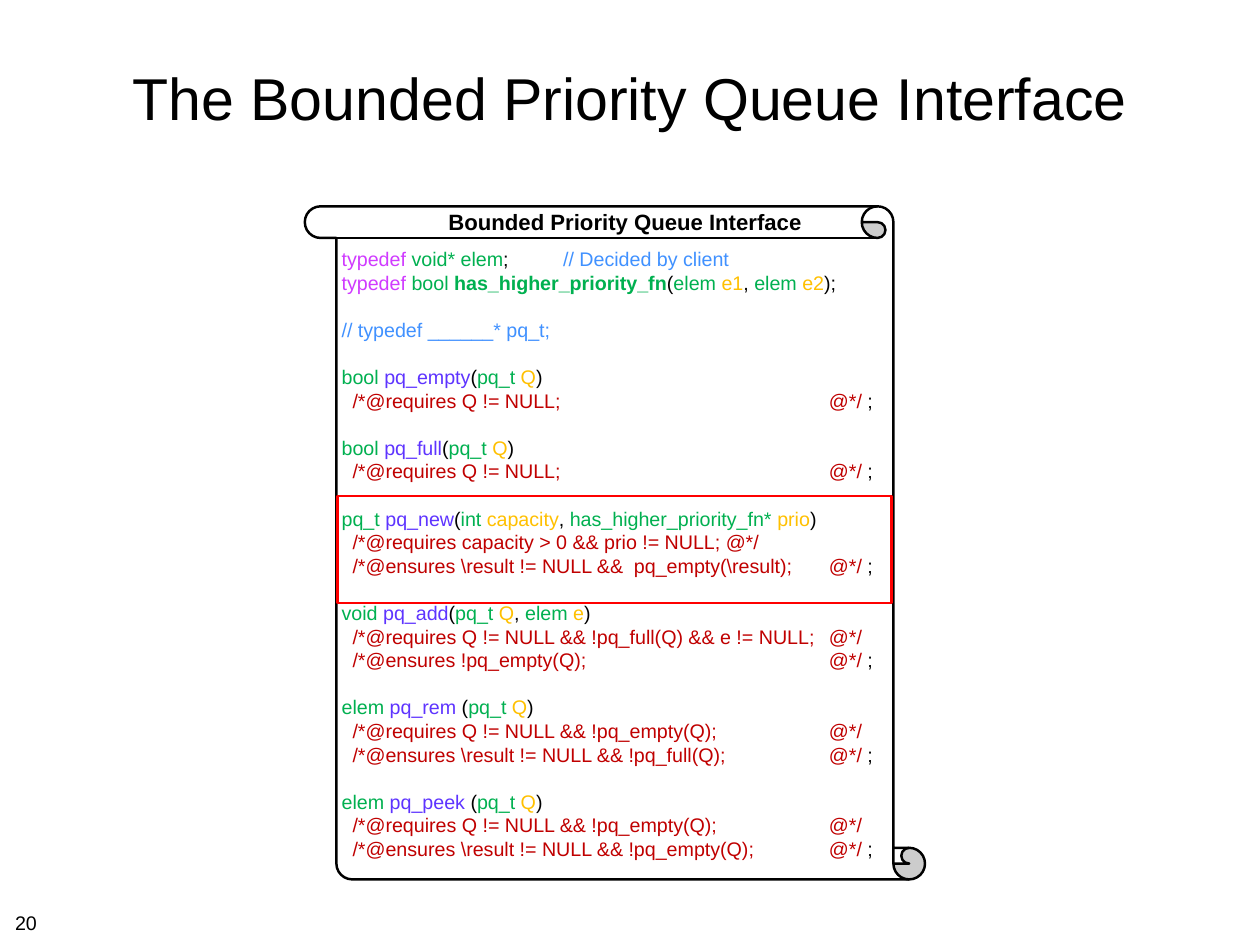
from lxml.etree import SubElement
from pptx import Presentation
from pptx.dml.color import RGBColor
from pptx.enum.shapes import MSO_SHAPE
from pptx.enum.text import MSO_ANCHOR, PP_ALIGN
from pptx.oxml.ns import qn
from pptx.util import Pt

EMU_PER_PX = 9144
COLOURS = {
    "plain": "000000",
    "paper": "FFFFFF",
    "keyword": "D03BFF",
    "type": "00B050",
    "alias": "00B050",
    "comment": "4091FF",
    "function": "5E34FF",
    "parameter": "FFC000",
    "contract": "C00000",
    "highlight": "FF0000",
}


def px(length):
    return length * EMU_PER_PX


def colour(name):
    return RGBColor.from_string(COLOURS[name])


def parameter_spans(parameters):
    spans = [("plain", "(")]
    for index, (kind, name) in enumerate(parameters):
        if index:
            spans.append(("plain", ", "))
        spans += [("type", kind + " "), ("parameter", name)]
    return spans


def prototype(result, name, parameters, contracts):
    lines = [[("type", result + " "), ("function", name), *parameter_spans(parameters), ("plain", ")")]]
    lines += [[("contract", "  /*@" + contract + "@*/")] for contract in contracts]
    if contracts[-1].endswith("\t"):
        lines[-1].append(("plain", " ;"))
    return lines


QUEUE = ("pq_t", "Q")
INTERFACE = [
    [
        [("keyword", "typedef "), ("type", "void* elem"), ("plain", ";"), ("comment", "\t// Decided by client")],
        [("keyword", "typedef "), ("type", "bool "), ("alias", "has_higher_priority_fn"),
         *parameter_spans([("elem", "e1"), ("elem", "e2")]), ("plain", ");")],
    ],
    [[("comment", "// typedef ______* pq_t;")]],
    prototype("bool", "pq_empty", [QUEUE], ["requires Q != NULL;\t"]),
    prototype("bool", "pq_full", [QUEUE], ["requires Q != NULL;\t"]),
    prototype("pq_t", "pq_new", [("int", "capacity"), ("has_higher_priority_fn*", "prio")],
              ["requires capacity > 0 && prio != NULL; ",
               "ensures \\result != NULL &&  pq_empty(\\result);\t"]),
    prototype("void", "pq_add", [QUEUE, ("elem", "e")],
              ["requires Q != NULL && !pq_full(Q) && e != NULL;\t", "ensures !pq_empty(Q);\t"]),
    prototype("elem", "pq_rem ", [QUEUE],
              ["requires Q != NULL && !pq_empty(Q);\t", "ensures \\result != NULL && !pq_full(Q);\t"]),
    prototype("elem", "pq_peek ", [QUEUE],
              ["requires Q != NULL && !pq_empty(Q);\t", "ensures \\result != NULL && !pq_empty(Q);\t"]),
]


class InterfaceSlide:
    """Draws the elements of the slide in one shared style."""

    font = "Arial"
    code_size = 16
    line_pitch = Pt(19.2)
    line_width = Pt(2)

    def __init__(self, page):
        self.page = page

    def style(self, span, size, shade="plain", bold=False):
        span.font.name = self.font
        span.font.size = Pt(size)
        span.font.bold = bold
        span.font.color.rgb = colour(shade)

    def inset(self, frame, left, top, right, bottom):
        frame.margin_left, frame.margin_top = px(left), px(top)
        frame.margin_right, frame.margin_bottom = px(right), px(bottom)

    def label(self, bounds, text, size, align=PP_ALIGN.LEFT, bold=False, wrap=False,
              anchor=MSO_ANCHOR.TOP, insets=(6, 6, 6, 6)):
        box = self.page.shapes.add_textbox(*map(px, bounds))
        frame = box.text_frame
        frame.text = text
        frame.word_wrap = wrap
        frame.vertical_anchor = anchor
        self.inset(frame, *insets)
        para = frame.paragraphs[0]
        para.alignment = align
        self.style(para.runs[0], size, bold=bold)

    def outline(self, kind, bounds, line, fill=None):
        shape = self.page.shapes.add_shape(kind, *map(px, bounds))
        shape.shadow.inherit = False
        shape.line.color.rgb = colour(line)
        shape.line.width = self.line_width
        if fill:
            shape.fill.solid()
            shape.fill.fore_color.rgb = colour(fill)
        else:
            shape.fill.background()
        return shape

    def code_line(self, para, spans, tab, gap):
        para.alignment = PP_ALIGN.LEFT
        para.line_spacing = self.line_pitch
        para.space_before = self.line_pitch if gap else Pt(0)
        stops = SubElement(para._p.get_or_add_pPr(), qn("a:tabLst"))
        SubElement(stops, qn("a:tab"), pos=str(px(tab)), algn="l")
        for shade, text in spans:
            span = para.add_run()
            span.text = text
            self.style(span, self.code_size, shade, bold=shade == "alias")

    def scroll(self, bounds, groups):
        shape = self.outline(MSO_SHAPE.VERTICAL_SCROLL, bounds, "plain", "paper")
        shape.adjustments[0] = 0.051
        shape._element.spPr.find(qn("a:xfrm")).set("flipH", "1")
        frame = shape.text_frame
        frame.word_wrap = True
        frame.vertical_anchor = MSO_ANCHOR.TOP
        self.inset(frame, 6, 10, 6, 0)
        para = frame.paragraphs[0]
        for group_index, group in enumerate(groups):
            for line_index, spans in enumerate(group):
                first = group_index == line_index == 0
                if not first:
                    para = frame.add_paragraph()
                self.code_line(para, spans, 250 if first else 550, group_index > 0 and line_index == 0)


def main():
    deck = Presentation()
    deck.slide_width, deck.slide_height = px(1422), px(1067)
    slide = InterfaceSlide(deck.slides.add_slide(deck.slide_layouts[6]))
    slide.label((104, 28, 1214, 164), "The Bounded Priority Queue Interface", 48,
                PP_ALIGN.CENTER, wrap=True, anchor=MSO_ANCHOR.MIDDLE)
    slide.scroll((344, 233, 700, 760), INTERFACE)
    slide.label((494, 230, 423, 40), "Bounded Priority Queue Interface", 18,
                PP_ALIGN.CENTER, bold=True, insets=(10, 5, 10, 5))
    slide.label((11, 1023, 37, 35), "20", 16)
    slide.outline(MSO_SHAPE.RECTANGLE, (381, 560, 625, 121), "highlight")
    deck.save("out.pptx")


if __name__ == "__main__":
    main()
